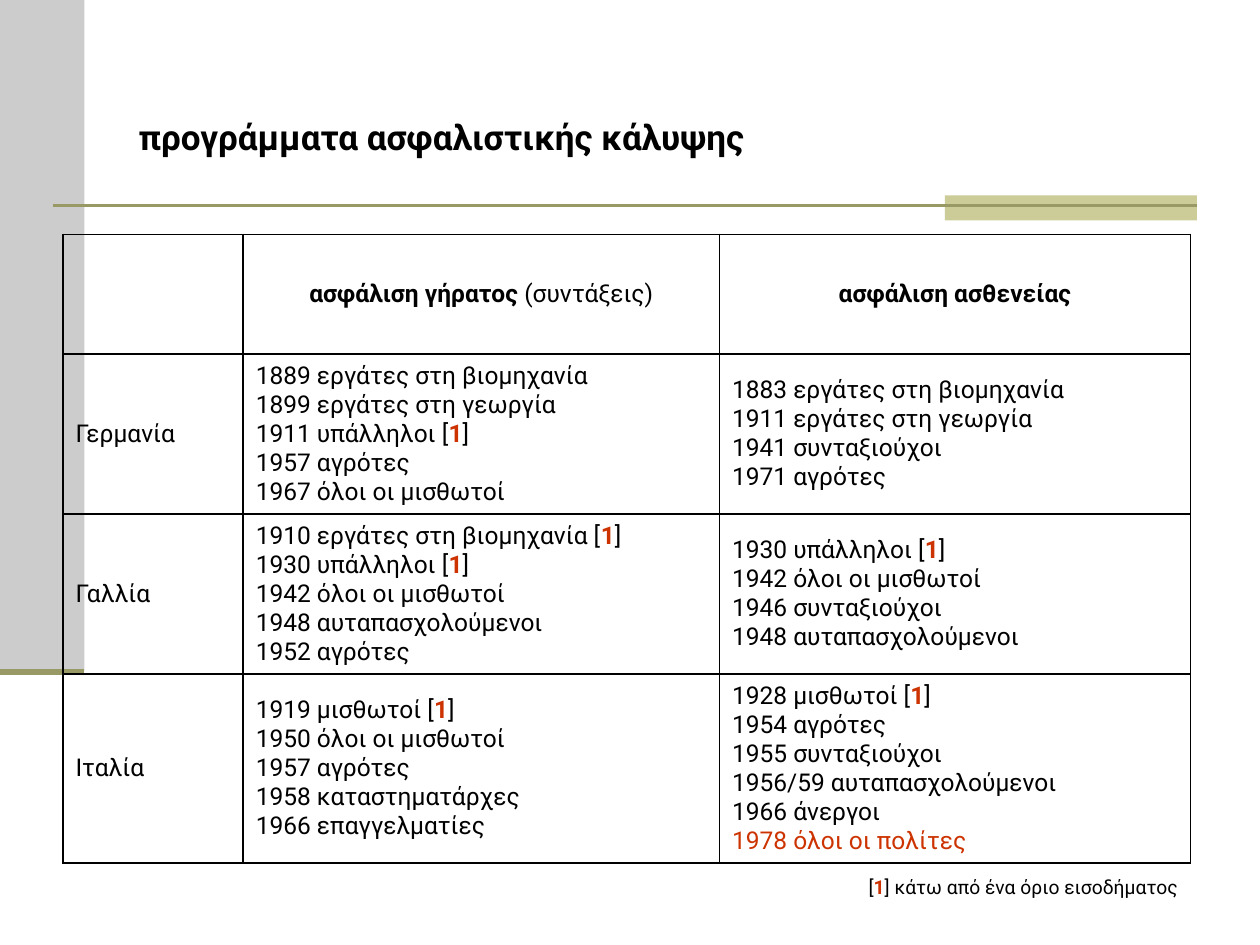
from dataclasses import dataclass

from lxml import etree
from pptx import Presentation
from pptx.dml.color import RGBColor
from pptx.enum.shapes import MSO_CONNECTOR, MSO_SHAPE
from pptx.enum.text import MSO_ANCHOR, PP_ALIGN
from pptx.oxml.ns import qn
from pptx.util import Inches, Pt

RECTANGLE = MSO_SHAPE.RECTANGLE
STRAIGHT = MSO_CONNECTOR.STRAIGHT
MIDDLE = MSO_ANCHOR.MIDDLE
LEFT, CENTER, RIGHT, JUSTIFY = PP_ALIGN.LEFT, PP_ALIGN.CENTER, PP_ALIGN.RIGHT, PP_ALIGN.JUSTIFY


@dataclass(frozen=True)
class Theme:
    font: str = "Roboto"
    ink: str = "000000"
    accent: str = "CC3300"
    sidebar: str = "CCCCCC"
    tab: str = "CCCC99"
    rule: str = "999966"
    title_size: int = 20
    table_size: int = 14
    note_size: int = 11


THEME = Theme()
PLAIN = (THEME.ink, False)
BOLD = (THEME.ink, True)
MARK = (THEME.accent, True)
HIGHLIGHT = (THEME.accent, False)


def plain(*lines):
    return [[(line, PLAIN)] for line in lines]


def limited(before, after=""):
    return [[(before + "[", PLAIN), ("1", MARK), ("]" + after, PLAIN)]]


TITLE = [[("προγράμματα ασφαλιστικής κάλυψης", BOLD)]]
FOOTNOTE = limited("", " κάτω από ένα όριο εισοδήματος")

HEADER = [
    [],
    [[("ασφάλιση γήρατος", BOLD), (" (συντάξεις)", PLAIN)]],
    [[("ασφάλιση ασθενείας", BOLD)]],
]
GERMANY = [
    plain("Γερμανία"),
    plain("1889 εργάτες στη βιομηχανία", "1899 εργάτες στη γεωργία")
    + limited("1911 υπάλληλοι ")
    + plain("1957 αγρότες", "1967 όλοι οι μισθωτοί"),
    plain("1883 εργάτες στη βιομηχανία", "1911 εργάτες στη γεωργία",
          "1941 συνταξιούχοι", "1971 αγρότες"),
]
FRANCE = [
    plain("Γαλλία"),
    limited("1910 εργάτες στη βιομηχανία ")
    + limited("1930 υπάλληλοι ")
    + plain("1942 όλοι οι μισθωτοί", "1948 αυταπασχολούμενοι", "1952 αγρότες"),
    limited("1930 υπάλληλοι ")
    + plain("1942 όλοι οι μισθωτοί", "1946 συνταξιούχοι", "1948 αυταπασχολούμενοι"),
]
ITALY = [
    plain("Ιταλία"),
    limited("1919 μισθωτοί ")
    + plain("1950 όλοι οι μισθωτοί", "1957 αγρότες", "1958 καταστηματάρχες",
            "1966 επαγγελματίες"),
    limited("1928 μισθωτοί ")
    + plain("1954 αγρότες", "1955 συνταξιούχοι", "1956/59 αυταπασχολούμενοι",
            "1966 άνεργοι")
    + [[("1978 όλοι οι πολίτες", HIGHLIGHT)]],
]
ROWS = [
    (0.95, CENTER, HEADER),
    (1.27, LEFT, GERMANY),
    (1.27, JUSTIFY, FRANCE),
    (1.5, JUSTIFY, ITALY),
]
COLUMNS = [1.43, 3.78, 3.74]
TABLE_LEFT, TABLE_TOP = 0.5, 1.86

PANELS = [
    ((0, 0, 0.67, 5.33), THEME.sidebar),
    ((7.5, 1.55, 2, 0.2), THEME.tab),
]
RULES = [
    ((0.42, 1.63, 9.5, 1.63), 1.5),
    ((0, 5.33, 0.67, 5.33), 3.5),
]


def inches(values):
    return [Inches(value) for value in values]


def write(frame, lines, size, align):
    for index, line in enumerate(lines):
        para = frame.paragraphs[0] if index == 0 else frame.add_paragraph()
        para.alignment = align
        for text, (color, bold) in line:
            span = para.add_run()
            span.text = text
            span.font.name = THEME.font
            span.font.size = Pt(size)
            span.font.bold = bold
            span.font.color.rgb = RGBColor.from_string(color)


def add_panel(page, bounds, color):
    panel = page.shapes.add_shape(RECTANGLE, *inches(bounds))
    panel.shadow.inherit = False
    panel.fill.solid()
    panel.fill.fore_color.rgb = RGBColor.from_string(color)
    panel.line.fill.background()


def add_rule(page, ends, width):
    rule = page.shapes.add_connector(STRAIGHT, *inches(ends))
    rule.line.color.rgb = RGBColor.from_string(THEME.rule)
    rule.line.width = Pt(width)
    etree.SubElement(rule._element.spPr, qn("a:effectLst"))


def add_borders(cell):
    properties = cell._tc.get_or_add_tcPr()
    for index, side in enumerate(("a:lnL", "a:lnR", "a:lnT", "a:lnB")):
        border = etree.Element(qn(side), w=str(Pt(1)))
        fill = etree.SubElement(border, qn("a:solidFill"))
        etree.SubElement(fill, qn("a:srgbClr"), val=THEME.ink)
        properties.insert(index, border)


def add_programmes(page):
    heights = [height for height, _, _ in ROWS]
    bounds = inches((TABLE_LEFT, TABLE_TOP, sum(COLUMNS), sum(heights)))
    table = page.shapes.add_table(len(ROWS), len(COLUMNS), *bounds).table
    table.first_row = table.horz_banding = False
    for column, width in zip(table.columns, COLUMNS):
        column.width = Inches(width)
    for row, (height, align, contents) in zip(table.rows, ROWS):
        row.height = Inches(height)
        for cell, lines in zip(row.cells, contents):
            cell.fill.background()
            cell.vertical_anchor = MIDDLE
            add_borders(cell)
            write(cell.text_frame, lines, THEME.table_size, align)


def main():
    deck = Presentation()
    deck.slide_width, deck.slide_height = inches((10, 7.5))
    page = deck.slides.add_slide(deck.slide_layouts[5])
    for bounds, color in PANELS:
        add_panel(page, bounds, color)
    for ends, width in RULES:
        add_rule(page, ends, width)

    title = page.shapes.title
    title.left, title.top, title.width, title.height = inches((1, 0.61, 8.5, 0.95))
    title.text_frame.vertical_anchor = MIDDLE
    write(title.text_frame, TITLE, THEME.title_size, LEFT)

    add_programmes(page)

    note = page.shapes.add_textbox(*inches((0.51, 6.9, 8.94, 0.29)))
    note.text_frame.word_wrap = True
    write(note.text_frame, FOOTNOTE, THEME.note_size, RIGHT)
    deck.save("out.pptx")


if __name__ == "__main__":
    main()
